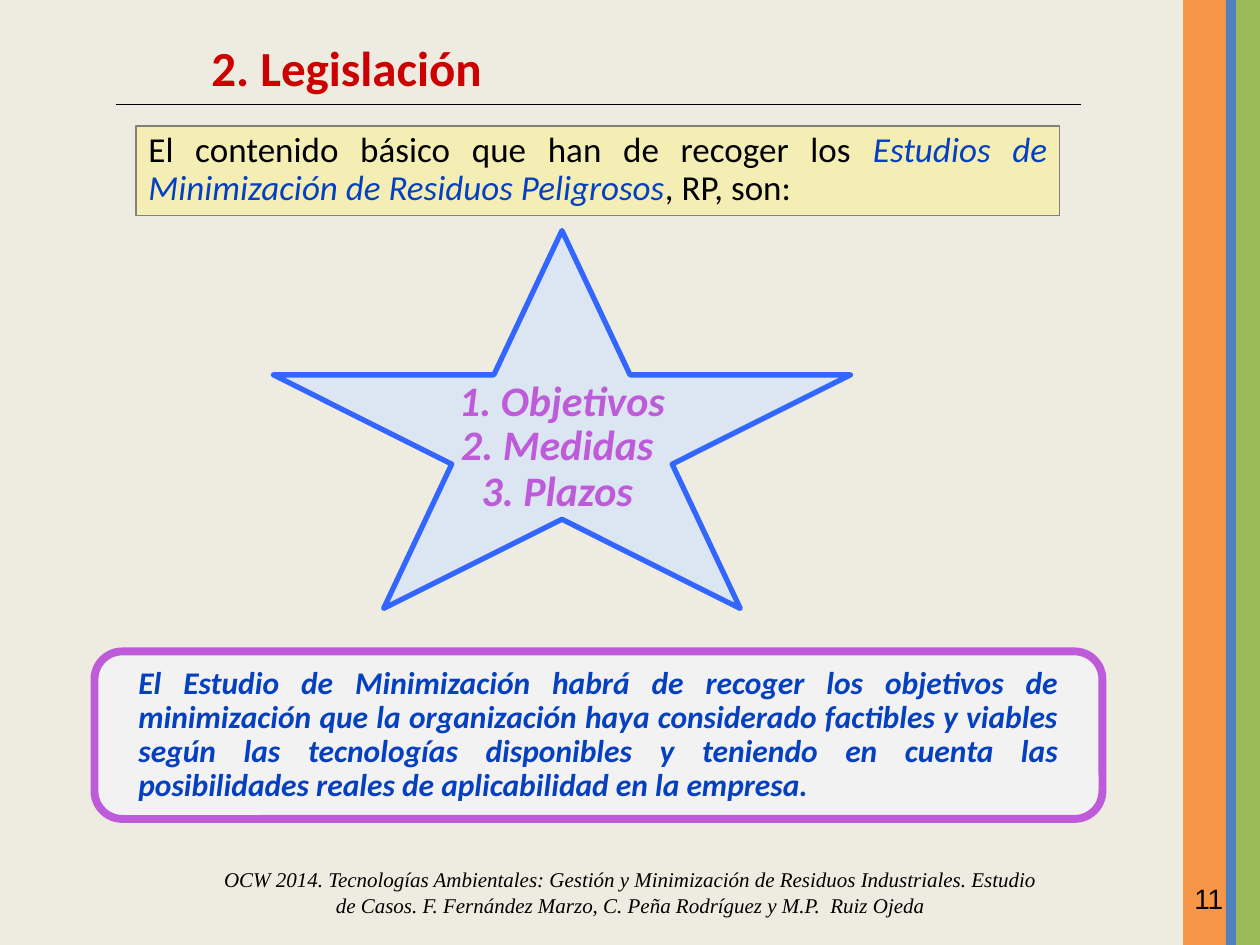
from typing import NamedTuple

from lxml import etree
from pptx import Presentation
from pptx.dml.color import RGBColor
from pptx.enum import shapes as sh, text as tx
from pptx.oxml.ns import qn
from pptx.util import Inches, Pt

BLACK = RGBColor(0x00, 0x00, 0x00)
GRAY = RGBColor(0x80, 0x80, 0x80)
SAND = RGBColor(0xEE, 0xEC, 0xE1)
CREAM = RGBColor(0xF4, 0xEE, 0xB4)
ORANGE = RGBColor(0xF7, 0x96, 0x46)
GREEN = RGBColor(0x9B, 0xBB, 0x59)
STEEL = RGBColor(0x4F, 0x81, 0xBD)
RED = RGBColor(0xCC, 0x00, 0x00)
BLUE = RGBColor(0x05, 0x40, 0xC0)
BRIGHT = RGBColor(0x33, 0x66, 0xFF)
PALE = RGBColor(0xDC, 0xE6, 0xF2)
LIGHT = RGBColor(0xF2, 0xF2, 0xF2)
PURPLE = RGBColor(0xBD, 0x5B, 0xD9)

KIND = sh.MSO_SHAPE
ALIGN = tx.PP_ALIGN


class Box(NamedTuple):
    left: float
    top: float
    width: float
    height: float


class Form(NamedTuple):
    box: Box
    fill: RGBColor
    kind: KIND = KIND.RECTANGLE
    line: RGBColor | None = None
    weight: float = 0.75


class Run(NamedTuple):
    text: str
    color: RGBColor
    italic: bool


def place(box: Box) -> list:
    return [Inches(side) for side in box]


def draw(slide, form: Form):
    shape = slide.shapes.add_shape(form.kind, *place(form.box))
    shape.shadow.inherit = False
    shape.fill.solid()
    shape.fill.fore_color.rgb = form.fill
    if form.line is None:
        shape.line.fill.background()
    else:
        shape.line.color.rgb = form.line
        shape.line.width = Pt(form.weight)
    return shape


def write(shape, *paras: list[Run], size: float, font: str = "Calibri",
          bold: bool = False, align: ALIGN = ALIGN.LEFT,
          gaps: tuple = (1,), anchor=tx.MSO_ANCHOR.TOP) -> None:
    frame = shape.text_frame
    frame.word_wrap = True
    frame.vertical_anchor = anchor
    for i, runs in enumerate(paras):
        para = frame.add_paragraph() if i else frame.paragraphs[0]
        para.alignment = align
        para.line_spacing = gaps[min(i, len(gaps) - 1)]
        for part in runs:
            run = para.add_run()
            run.text = part.text
            run.font.size = Pt(size)
            run.font.name = font
            run.font.bold = bold
            run.font.italic = part.italic
            run.font.color.rgb = part.color


def label(slide, box: Box, *paras: list[Run], **style) -> None:
    write(slide.shapes.add_textbox(*place(box)), *paras, **style)


def rule(slide, left: float, right: float, top: float) -> None:
    line = slide.shapes.add_connector(
        sh.MSO_CONNECTOR.STRAIGHT,
        Inches(left), Inches(top), Inches(right), Inches(top))
    line.line.color.rgb = BLACK
    line.line.width = Pt(0.75)
    etree.SubElement(line.element.spPr, qn("a:effectLst"))


BARS = [
    Form(Box(9.39, 0, 0.35, 7.5), ORANGE),
    Form(Box(9.81, 0, 0.19, 7.5), GREEN),
    Form(Box(9.73, 0, 0.08, 7.5), STEEL),
]
INTRO = Form(Box(1.08, 1, 7.33, 0.71), CREAM, line=GRAY)
STAR = Form(Box(2.17, 1.83, 4.58, 3), PALE, KIND.STAR_5_POINT, BRIGHT, 3)
PANEL = Form(Box(0.75, 5.17, 8, 1.33), LIGHT, KIND.ROUNDED_RECTANGLE,
             PURPLE, 4.5)
LEAD = [
    Run("El contenido básico que han de recoger los ", BLACK, False),
    Run("Estudios de Minimización de Residuos Peligrosos", BLUE, True),
    Run(", RP, son:", BLACK, False),
]
POINTS = [[Run(item, PURPLE, True)]
          for item in ("1. Objetivos", "2. Medidas ", "3. Plazos ")]
NOTE = Run(
    "El Estudio de Minimización habrá de recoger los objetivos de "
    "minimización que la organización haya considerado factibles y viables "
    "según las tecnologías disponibles y teniendo en cuenta las "
    "posibilidades reales de aplicabilidad en la empresa.", BLUE, True)
CREDIT = Run(
    "OCW 2014. Tecnologías Ambientales: Gestión y Minimización de Residuos "
    "Industriales. Estudio de Casos. F. Fernández Marzo, C. Peña Rodríguez "
    "y M.P.  Ruiz Ojeda", BLACK, True)


def main() -> None:
    deck = Presentation()
    deck.slide_width, deck.slide_height = Inches(10), Inches(7.5)
    slide = deck.slides.add_slide(deck.slide_layouts[6])
    slide.background.fill.solid()
    slide.background.fill.fore_color.rgb = SAND

    for bar in BARS:
        draw(slide, bar)
    rule(slide, 0.92, 8.58, 0.83)
    write(draw(slide, INTRO), LEAD, size=20, align=ALIGN.JUSTIFY, gaps=(0.9,))
    label(slide, Box(1.58, 0.25, 4.58, 0.57),
          [Run("2. Legislación", RED, False)], size=28, bold=True)
    draw(slide, STAR)
    draw(slide, PANEL)
    label(slide, Box(9.38, 6.95, 0.62, 0.52),
          [Run("11", BLACK, False)], size=16, font="Arial")
    label(slide, Box(1.67, 6.83, 6.67, 0.5), [CREDIT], size=12,
          font="Times New Roman", align=ALIGN.CENTER,
          anchor=tx.MSO_ANCHOR.MIDDLE)
    label(slide, Box(3.42, 3, 2.08, 1.2), *POINTS, size=24, bold=True,
          align=ALIGN.CENTER, gaps=(0.8, 0.9))
    label(slide, Box(1, 5.25, 7.5, 1.2), [NOTE], size=18, bold=True,
          align=ALIGN.JUSTIFY, gaps=(0.9,))
    deck.save("out.pptx")


if __name__ == "__main__":
    main()
